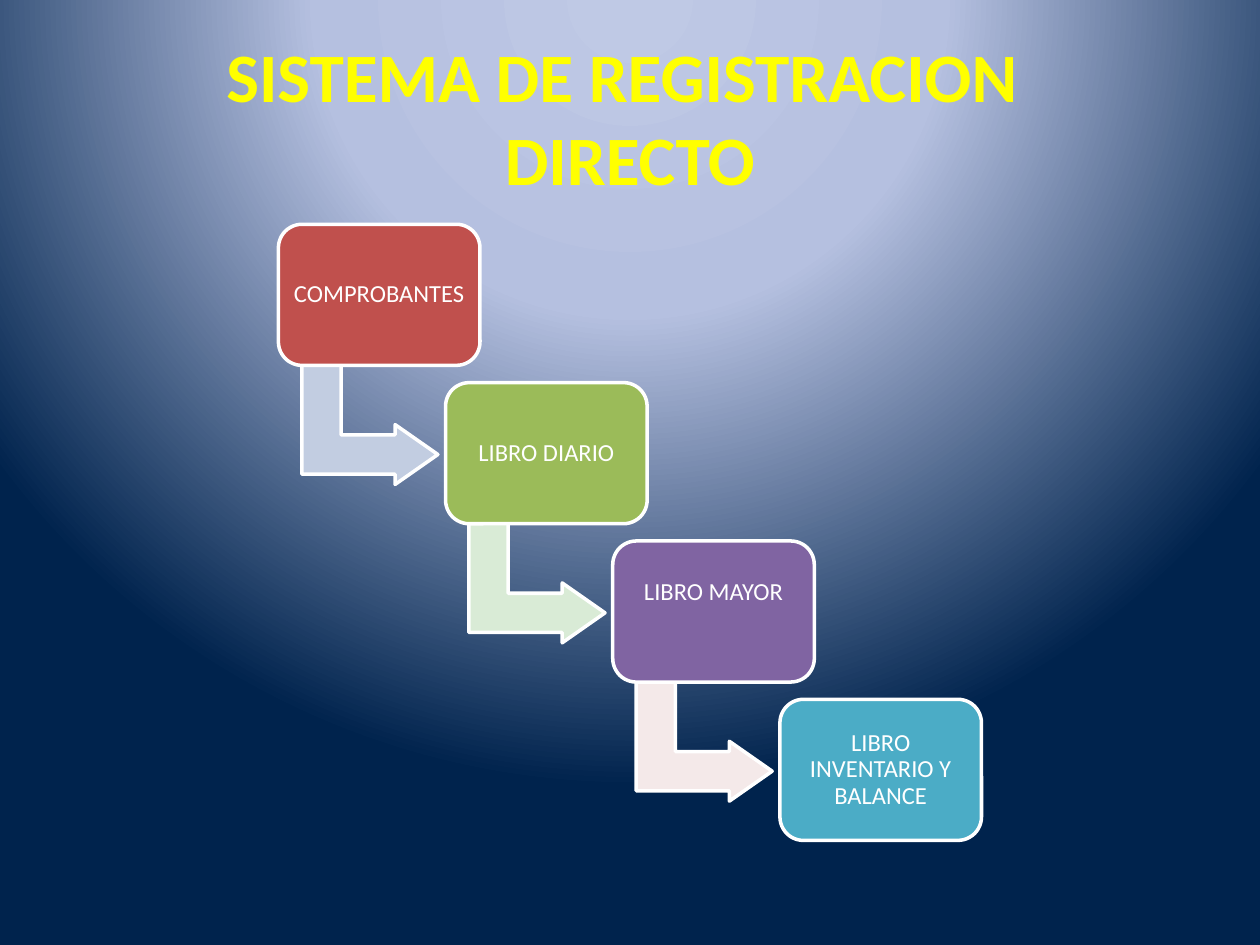
from dataclasses import dataclass
from typing import Optional

import lxml.etree
import pptx
import pptx.dml.color
import pptx.enum.shapes
import pptx.enum.text
import pptx.oxml
import pptx.oxml.ns
import pptx.util

Inches = pptx.util.Inches
Pt = pptx.util.Pt
Kind = pptx.enum.shapes.MSO_SHAPE


@dataclass(frozen=True)
class Theme:
    font: str = "Calibri"
    title: str = "FFFF00"
    white: str = "FFFFFF"
    head: float = 39.6
    body: float = 14
    edge: float = 2
    glow: tuple = ((0, "BFC9E5"), (40, "B5C0E0"), (100, "00234D"))


@dataclass(frozen=True)
class Step:
    text: str
    fill: str
    arrow: Optional[str] = None  # colour of the arrow to the next step
    lift: float = 0  # extra room below the text


THEME = Theme()
STEPS = (
    Step("COMPROBANTES", "C0504D", "C2CDE1"),
    Step("LIBRO DIARIO", "9BBB59", "D9EBD6"),
    Step("LIBRO MAYOR", "8064A2", "F4E9E9", 0.3),
    Step("LIBRO INVENTARIO Y BALANCE", "4BACC6"),
)
# Staircase: first and last corner, equal strides between
LEFT, TOP, RIGHT, LOW = 2.21, 1.78, 6.19, 5.55
DX = (RIGHT - LEFT) / (len(STEPS) - 1)
DY = (LOW - TOP) / (len(STEPS) - 1)


def color(code: str):
    return pptx.dml.color.RGBColor.from_string(code)


def paint(slide) -> None:
    """Radial glow that spreads from above the slide."""
    slide.background.fill.solid()
    props = slide.element.find(".//" + pptx.oxml.ns.qn("p:bgPr"))
    stops = "".join(
        f'<a:gs pos="{pos * 1000}"><a:srgbClr val="{code}"/></a:gs>'
        for pos, code in THEME.glow
    )
    glow = pptx.oxml.parse_xml(
        f'<a:gradFill {pptx.oxml.ns.nsdecls("a")} rotWithShape="1">'
        f'<a:gsLst>{stops}</a:gsLst><a:path path="circle">'
        '<a:fillToRect l="50000" t="-80000" r="50000" b="180000"/>'
        "</a:path></a:gradFill>"
    )
    props.replace(props[0], glow)


def write(shape, text: str, size: float, code: str, bold: bool = False):
    """Centred text in one paragraph."""
    frame = shape.text_frame
    frame.word_wrap = True
    frame.vertical_anchor = pptx.enum.text.MSO_ANCHOR.MIDDLE
    para = frame.paragraphs[0]
    para.text = text
    para.alignment = pptx.enum.text.PP_ALIGN.CENTER
    for run in para.runs:
        run.font.name = THEME.font
        run.font.size = Pt(size)
        run.font.bold = bold
        run.font.color.rgb = color(code)
    return frame


def block(slide, kind, x: float, y: float, w: float, h: float, fill: str):
    """Filled shape with a white edge."""
    shape = slide.shapes.add_shape(kind, Inches(x), Inches(y), Inches(w), Inches(h))
    shape.shadow.inherit = False
    shape.fill.solid()
    shape.fill.fore_color.rgb = color(fill)
    shape.line.color.rgb = color(THEME.white)
    shape.line.width = Pt(THEME.edge)
    return shape


def stair(slide, step: Step, x: float, y: float) -> None:
    # Arrow behind the box
    if step.arrow:
        bend = block(slide, Kind.BENT_UP_ARROW, x + 0.25, y + 1.05, 0.95, 1.08, step.arrow)
        bend.rotation = 90
        for i, val in enumerate((0.328, 0.25, 0.358)):
            bend.adjustments[i] = val
    # Box with its label
    box = block(slide, Kind.ROUNDED_RECTANGLE, x, y, 1.6, 1.12, step.fill)
    box.adjustments[0] = 0.167
    frame = write(box, step.text, THEME.body, THEME.white)
    frame.margin_left = frame.margin_right = frame.margin_top = Inches(0.06)
    frame.margin_bottom = Inches(0.06 + step.lift)
    frame.paragraphs[0].line_spacing = 0.9


def main() -> None:
    deck = pptx.Presentation()
    deck.slide_width, deck.slide_height = Inches(10), Inches(7.5)
    slide = deck.slides.add_slide(deck.slide_layouts[6])
    paint(slide)

    # Title
    title = slide.shapes.add_textbox(Inches(0.5), Inches(0.3), Inches(9), Inches(1.25))
    write(title, "SISTEMA DE REGISTRACION \vDIRECTO", THEME.head, THEME.title, True)

    # Steps
    for i, step in enumerate(STEPS):
        stair(slide, step, LEFT + i * DX, TOP + i * DY)

    deck.save("out.pptx")


if __name__ == "__main__":
    main()
